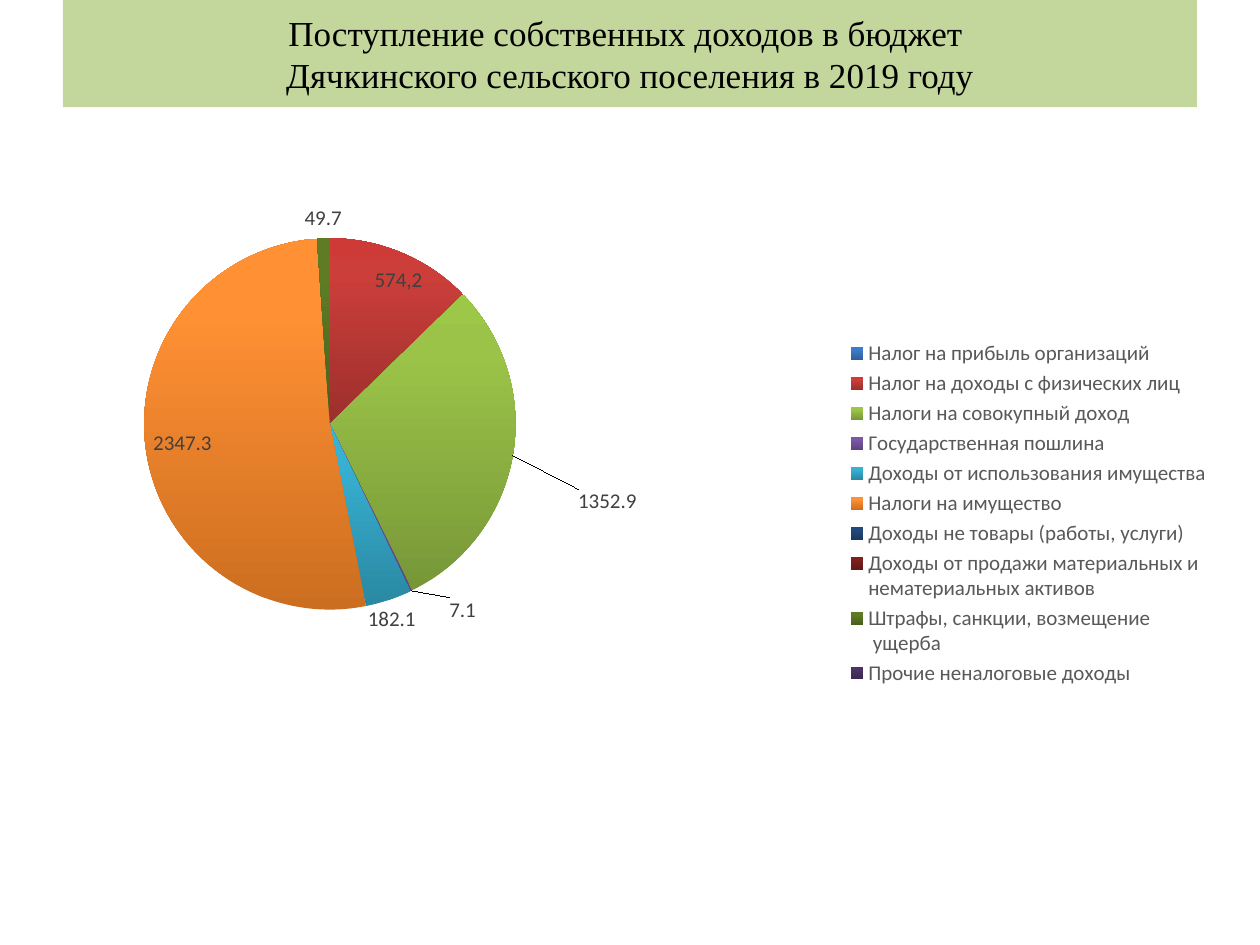
from lxml.etree import SubElement
from pptx import Presentation
from pptx.chart.data import CategoryChartData
from pptx.dml.color import RGBColor
from pptx.enum.chart import XL_CHART_TYPE, XL_LABEL_POSITION, XL_LEGEND_POSITION
from pptx.enum.shapes import MSO_SHAPE
from pptx.enum.text import MSO_ANCHOR, PP_ALIGN
from pptx.oxml.ns import qn
from pptx.util import Pt


def style_font(font, name, size, color):
    font.name = name
    font.size = Pt(size)
    font.color.rgb = RGBColor.from_string(color)


def set_layout(parent, index, settings):
    for old in parent.findall(qn("c:layout")):
        parent.remove(old)
    layout = SubElement(parent, qn("c:layout"))
    parent.insert(index, layout)
    manual = SubElement(layout, qn("c:manualLayout"))
    for name, value in settings.items():
        SubElement(manual, qn(f"c:{name}")).set("val", str(value))


deck = Presentation()
deck.slide_width = Pt(720)
deck.slide_height = Pt(540)
page = deck.slides.add_slide(deck.slide_layouts[6])

title = page.shapes.add_shape(MSO_SHAPE.RECTANGLE, Pt(36), Pt(0), Pt(648), Pt(61.2))
title.shadow.inherit = False
title.fill.solid()
title.fill.fore_color.rgb = RGBColor.from_string("C3D69B")
title.line.fill.background()
title.text_frame.word_wrap = True
title.text_frame.vertical_anchor = MSO_ANCHOR.MIDDLE
para = title.text_frame.paragraphs[0]
para.text = "Поступление собственных доходов в бюджет \vДячкинского сельского поселения в 2019 году"
para.alignment = PP_ALIGN.CENTER
style_font(para.font, "Times New Roman", 20, "000000")

incomes = [
    ("Налог на прибыль организаций", None, "2F5F99", "3D7CC7", "3A7CCB"),
    ("Налог на доходы с физических лиц", 574.2, "9C2F2D", "CB3E3A", "CE3B37"),
    ("Налоги на совокупный доход", 1352.9, "779737", "9BC348", "9DC746"),
    ("Государственная пошлина ", 7.1, "5F4480", "7B58A6", "7C57A8"),
    ("Доходы от использования имущества", 182.1, "2A88A2", "37B1D2", "34B4D6"),
    ("Налоги на имущество", 2347.3, "CC6E20", "FF9034", "FF9136"),
    ("Доходы не товары (работы, услуги)", None, "19395F", "204A7C", "1E4A7E"),
    ("Доходы от продажи материальных и \nнематериальных активов", None, "621917", "7F201E", "811F1C"),
    ("Штрафы, санкции, возмещение\n ущерба", 49.7, "495F1C", "5F7C25", "607E23"),
    ("Прочие неналоговые доходы", None, "39284E", "4A3365", "4A3366"),
]
data = CategoryChartData()
data.categories = [income[0] for income in incomes]
data.add_series("Series 1", [income[1] for income in incomes])
chart = page.shapes.add_chart(
    XL_CHART_TYPE.PIE, Pt(36), Pt(61.2), Pt(663.12), Pt(464.4), data
).chart
chart.has_title = False
style_font(chart.font, "Calibri", 10, "000000")
chart.has_legend = True
chart.legend.position = XL_LEGEND_POSITION.RIGHT
chart.legend.include_in_layout = False
style_font(chart.legend.font, "Calibri", 12, "595959")

plot = chart.plots[0]
plot.vary_by_categories = True
series = plot.series[0]
plot_area = series._element.getparent().getparent()
set_layout(plot_area, 0, {
    "layoutTarget": "inner", "xMode": "edge", "yMode": "edge",
    "x": 0.07, "y": 0.12, "w": 0.32, "h": 0.54,
})

for index, (name, value, *colors) in enumerate(incomes):
    properties = series.points[index].format
    properties.fill.gradient()
    gradient = series._element.findall(qn("c:dPt"))[index].find(f".//{qn('a:gradFill')}")
    for child in list(gradient):
        gradient.remove(child)
    stops = SubElement(gradient, qn("a:gsLst"))
    for position, color in zip((0, 80, 100), colors):
        stop = SubElement(stops, qn("a:gs"), pos=str(position * 1000))
        SubElement(stop, qn("a:srgbClr"), val=color)
    SubElement(gradient, qn("a:lin"), ang=str(270 * 60000), scaled="0")
    properties.line.fill.background()

labels = series.data_labels
labels.show_value = True
labels.position = XL_LABEL_POSITION.OUTSIDE_END
style_font(labels.font, "Calibri", 12, "404040")
leader = labels._element.find(qn("c:showLeaderLines"))
if leader is None:
    leader = SubElement(labels._element, qn("c:showLeaderLines"))
leader.set("val", "1")

placements = {
    1: (XL_LABEL_POSITION.INSIDE_END, 0.02, 0.01),
    2: (XL_LABEL_POSITION.OUTSIDE_END, 0.05, 0.04),
    3: (XL_LABEL_POSITION.OUTSIDE_END, 0.03, 0),
    4: (XL_LABEL_POSITION.OUTSIDE_END, -0.02, 0),
    5: (XL_LABEL_POSITION.INSIDE_END, 0, 0.01),
}
for index, (position, x, y) in placements.items():
    label = series.points[index].data_label
    style_font(label.font, "Calibri", 12, "404040")
    label.position = position
    for element in labels._element.findall(qn("c:dLbl")):
        if element.find(qn("c:idx")).get("val") == str(index):
            set_layout(element, 1, {"x": x, "y": y})

para = series.points[1].data_label.text_frame.paragraphs[0]
span = para.add_run()
span.text = "574,2"
style_font(span.font, "Calibri", 12, "404040")

deck.save("out.pptx")
